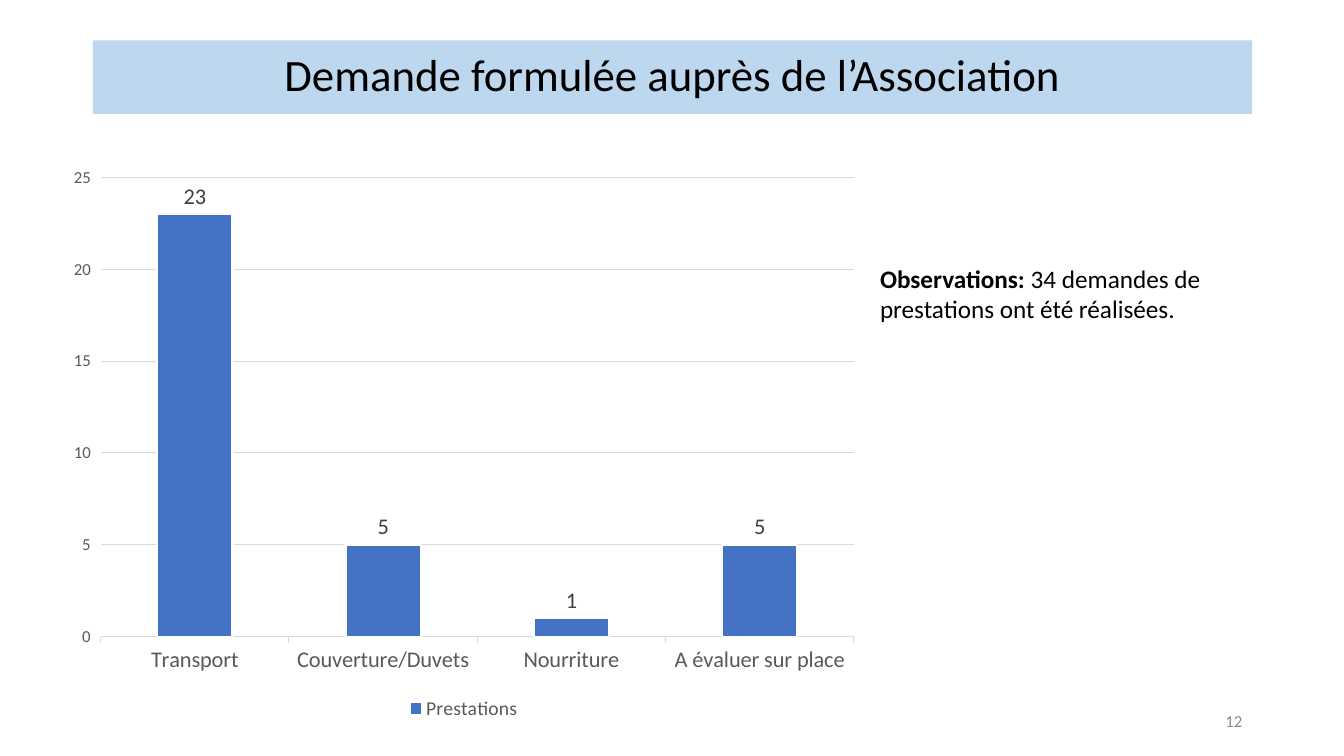
from pptx import Presentation
from pptx.chart.data import CategoryChartData
from pptx.dml.color import RGBColor
from pptx.enum.chart import XL_CHART_TYPE, XL_LABEL_POSITION, XL_LEGEND_POSITION, XL_TICK_MARK
from pptx.enum.text import MSO_ANCHOR, PP_ALIGN
from pptx.util import Inches, Pt

COLORS = {
    "text": "000000",
    "banner": "BDD7EE",
    "bar": "4472C4",
    "bar_edge": "FFFFFF",
    "grid": "D9D9D9",
    "axis_text": "595959",
    "label": "404040",
    "page_number": "8C8C8C",
}
FONT = "Calibri"


def color(name):
    return RGBColor.from_string(COLORS[name])


def style_font(font, size, color_name="text", bold=False):
    font.name = FONT
    font.size = Pt(size)
    font.bold = bold
    font.color.rgb = color(color_name)


deck = Presentation()
deck.slide_width = Inches(13.33)
deck.slide_height = Inches(7.5)
page = deck.slides.add_slide(deck.slide_layouts[5])

# Title banner
title = page.shapes.title
title.left, title.top = Inches(0.92), Inches(0.4)
title.width, title.height = Inches(11.5), Inches(0.73)
title.fill.solid()
title.fill.fore_color.rgb = color("banner")
title.text_frame.text = "Demande formulée auprès de l’Association"
title.text_frame.vertical_anchor = MSO_ANCHOR.MIDDLE
para = title.text_frame.paragraphs[0]
para.alignment = PP_ALIGN.CENTER
para.line_spacing = 0.9
style_font(para.runs[0].font, 32)

# Column chart
data = CategoryChartData()
data.categories = ["Transport", "Couverture/Duvets", "Nourriture", "A évaluer sur place"]
data.add_series("Prestations", [23, 5, 1, 5])
chart = page.shapes.add_chart(
    XL_CHART_TYPE.COLUMN_CLUSTERED,
    Inches(0.57), Inches(1.55), Inches(8.06), Inches(5.64), data,
).chart
chart.has_title = False
style_font(chart.font, 10)

chart.has_legend = True
chart.legend.position = XL_LEGEND_POSITION.BOTTOM
chart.legend.include_in_layout = False
style_font(chart.legend.font, 14, "axis_text")

category_axis = chart.category_axis
category_axis.major_tick_mark = XL_TICK_MARK.OUTSIDE
style_font(category_axis.tick_labels.font, 16, "axis_text")

value_axis = chart.value_axis
value_axis.minimum_scale = 0
value_axis.maximum_scale = 25
value_axis.major_unit = 5
value_axis.major_tick_mark = XL_TICK_MARK.OUTSIDE
value_axis.format.line.fill.background()
style_font(value_axis.tick_labels.font, 12, "axis_text")

for line in (category_axis.format.line, value_axis.major_gridlines.format.line):
    line.color.rgb = color("grid")
    line.width = Pt(0.75)

plot = chart.plots[0]
plot.gap_width = 150
plot.vary_by_categories = False
bars = plot.series[0]
bars.format.fill.solid()
bars.format.fill.fore_color.rgb = color("bar")
bars.format.line.color.rgb = color("bar_edge")
bars.format.line.width = Pt(1.5)
labels = bars.data_labels
labels.show_value = True
labels.position = XL_LABEL_POSITION.OUTSIDE_END
style_font(labels.font, 16, "label")

# Observations
box = page.shapes.add_textbox(Inches(8.63), Inches(2.56), Inches(4.34), Inches(1.31))
box.text_frame.word_wrap = True
para = box.text_frame.paragraphs[0]
for text, bold in [
    ("Observations: ", True),
    ("34 demandes de prestations ont été réalisées.", False),
]:
    span = para.add_run()
    span.text = text
    style_font(span.font, 18, bold=bold)

# Page number
box = page.shapes.add_textbox(Inches(9.42), Inches(6.95), Inches(3), Inches(0.4))
box.text_frame.word_wrap = True
box.text_frame.vertical_anchor = MSO_ANCHOR.MIDDLE
para = box.text_frame.paragraphs[0]
para.alignment = PP_ALIGN.RIGHT
span = para.add_run()
span.text = "12"
style_font(span.font, 12, "page_number")

deck.save("out.pptx")
